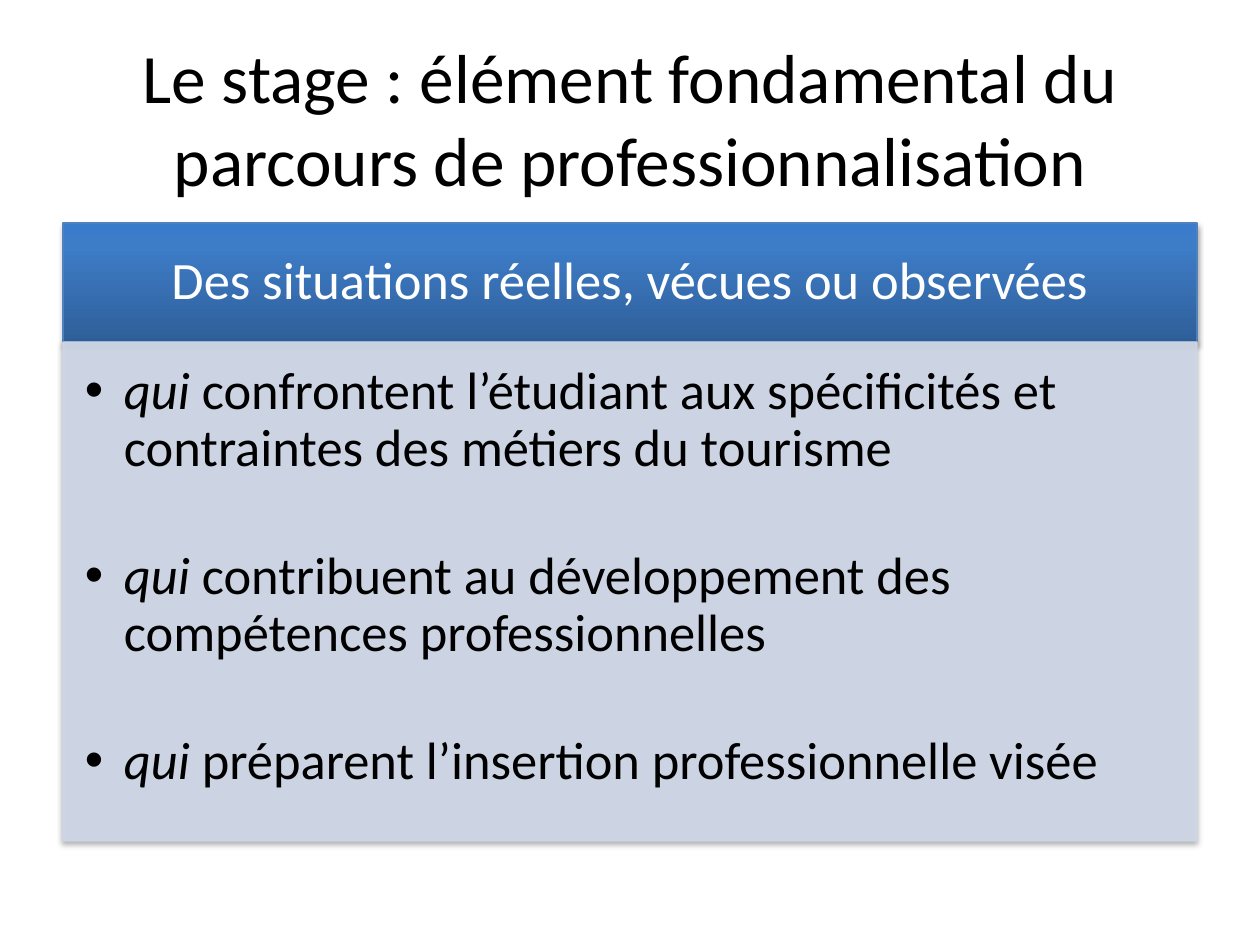
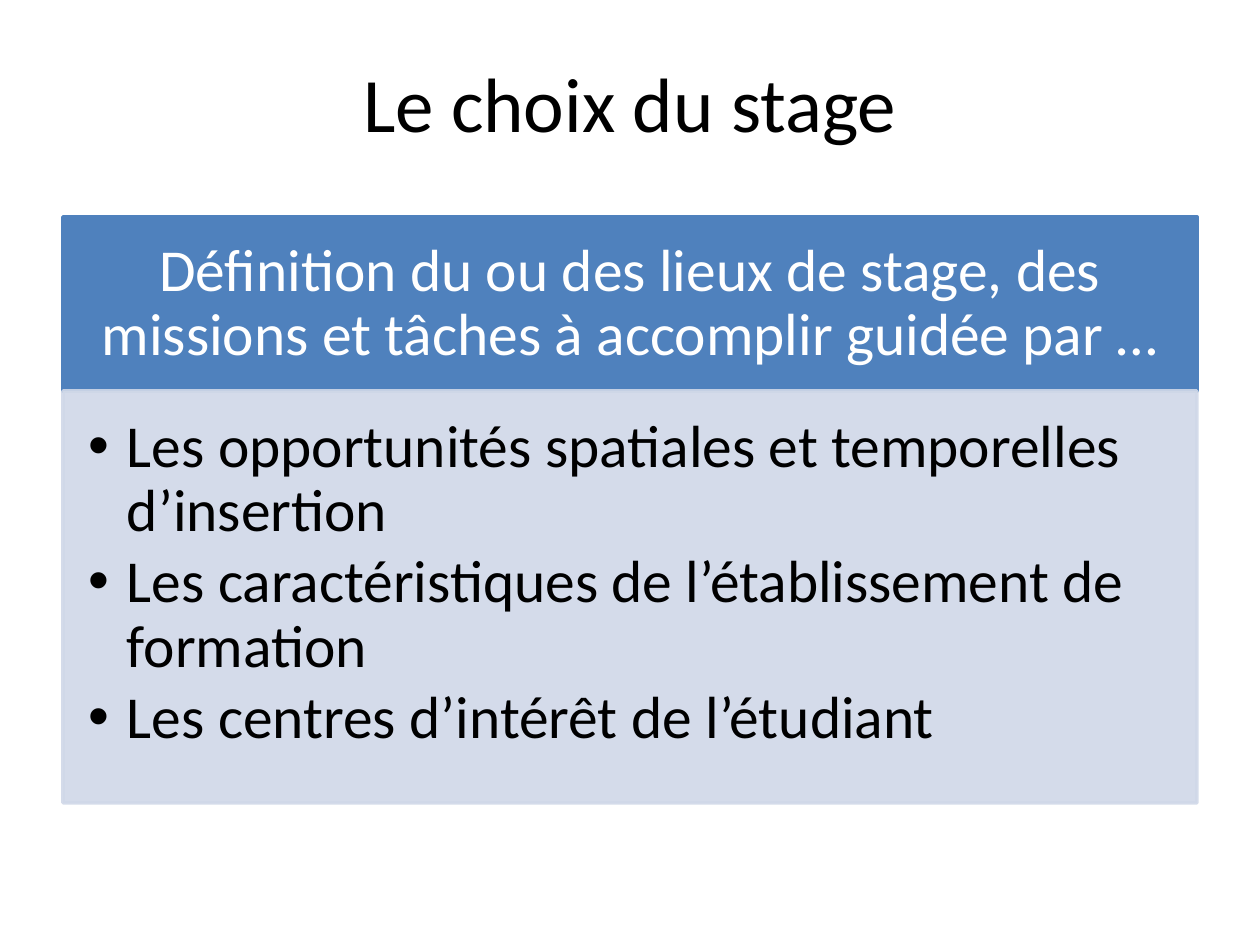
from copy import deepcopy
from dataclasses import dataclass

from lxml.etree import SubElement
from pptx import Presentation
from pptx.dml.color import RGBColor as RGB
from pptx.enum.shapes import MSO_SHAPE as SHAPE
from pptx.enum.text import MSO_ANCHOR as ANCHOR, MSO_AUTO_SIZE as FIT, PP_ALIGN as ALIGN
from pptx.oxml.ns import qn
from pptx.util import Emu, Pt

PX = 914400 / 126  # EMU in one px
LEFT, WIDTH = 63, 1134


@dataclass(frozen=True)
class Theme:
    font: str = "Calibri"
    ink: str = "000000"
    paper: str = "FFFFFF"
    accent: str = "4F81BD"
    panel: str = "D0D8E8"
    gradient: tuple = ((0, "2F5F99"), (0.8, "3D7CC7"), (1, "3A7CCB"))
    panel_opacity: int = 90
    shadow_opacity: int = 35


THEME = Theme()


def px(n):
    return Emu(round(n * PX))


def apply(target, values):
    for name, value in values.items():
        setattr(target, name, value)


def place(sp, top, height):
    apply(sp, dict(left=px(LEFT), top=px(top), width=px(WIDTH), height=px(height)))


def add_run(p, text, size, color, italic=False):
    r = p.add_run()
    r.text = text
    apply(r.font, dict(name=THEME.font, size=Pt(size), italic=italic))
    r.font.color.rgb = RGB.from_string(color)


def set_frame(tf, anchor, insets):
    sides = ("margin_left", "margin_top", "margin_right", "margin_bottom")
    apply(tf, dict(zip(sides, map(px, insets))))
    apply(tf, dict(word_wrap=True, auto_size=FIT.NONE, vertical_anchor=anchor))


def set_alpha(color_el, percent):
    SubElement(color_el, qn("a:alpha"), val=str(percent * 1000))


def paint(sp, color, line_width):
    sp.fill.solid()
    sp.fill.fore_color.rgb = sp.line.color.rgb = RGB.from_string(color)
    sp.line.width = Pt(line_width)


def paint_gradient(sp):
    sp.fill.gradient()
    sp.fill.gradient_angle = 90
    stops = sp._element.spPr.find(".//" + qn("a:gsLst"))
    stops.append(deepcopy(stops[-1]))
    for stop, (position, color) in zip(sp.fill.gradient_stops, THEME.gradient):
        stop.position = position
        stop.color.rgb = RGB.from_string(color)


def set_shadow(sp, visible):
    sp.shadow.inherit = False
    if visible:
        effects = sp._element.spPr.find(qn("a:effectLst"))
        outer = SubElement(effects, qn("a:outerShdw"), blurRad="40000", dist="23000",
                           dir="5400000", rotWithShape="0")
        set_alpha(SubElement(outer, qn("a:srgbClr"), val=THEME.ink), THEME.shadow_opacity)


def set_title(s, text, height, size):
    sp = s.shapes.title
    place(sp, 38, height)
    tf = sp.text_frame
    apply(tf, dict(word_wrap=True, auto_size=FIT.NONE, vertical_anchor=ANCHOR.MIDDLE))
    p = tf.paragraphs[0]
    p.alignment = ALIGN.CENTER
    add_run(p, text, size, THEME.ink)


def add_header(s, text, top, height, size, line_width, insets, raised):
    sp = s.shapes.add_shape(SHAPE.RECTANGLE, 0, 0, 0, 0)
    place(sp, top, height)
    paint(sp, THEME.accent, line_width)
    if raised:
        paint_gradient(sp)
    set_shadow(sp, raised)
    set_frame(sp.text_frame, ANCHOR.MIDDLE, insets)
    p = sp.text_frame.paragraphs[0]
    apply(p, dict(alignment=ALIGN.CENTER, line_spacing=0.9))
    add_run(p, text, size, THEME.paper)


def set_list(s, items, top, height, size, line_width, insets, gap, raised):
    sp = s.placeholders[1]
    s.shapes._spTree.append(sp._element)  # in front of the header
    place(sp, top, height)
    paint(sp, THEME.panel, line_width)
    for color_el in sp._element.spPr.iter(qn("a:srgbClr")):
        set_alpha(color_el, THEME.panel_opacity)
    set_shadow(sp, raised)
    tf = sp.text_frame
    set_frame(tf, ANCHOR.TOP, insets)
    for i, (lead, text) in enumerate(items):
        p = tf.add_paragraph() if i else tf.paragraphs[0]
        apply(p, dict(line_spacing=0.9, space_before=Pt(0), space_after=Pt(gap)))
        apply_indent = p._p.get_or_add_pPr().set
        apply_indent("marL", str(px(39)))
        apply_indent("indent", str(-px(39)))
        if lead:
            add_run(p, lead, size, THEME.ink, italic=True)
        add_run(p, text, size, THEME.ink)


def main():
    prs = Presentation()
    prs.slide_width, prs.slide_height = px(1260), px(945)
    title_and_content = prs.slide_layouts[1]

    # Role of the internship
    s = prs.slides.add_slide(title_and_content)
    look = dict(size=30, line_width=0.75, raised=True)
    set_title(s, "Le stage : élément fondamental du parcours de professionnalisation", 158, 39.6)
    add_header(s, "Des situations réelles, vécues ou observées", 223, 119,
               insets=(29, 16, 29, 16), **look)
    set_list(s, [
        ("qui ", "confrontent l’étudiant aux spécificités et contraintes des métiers du tourisme"),
        ("qui", " contribuent au développement des compétences professionnelles"),
        ("qui", " préparent l’insertion professionnelle visée"),
    ], 342, 499, insets=(22, 22, 29, 33), gap=41, **look)

    # Choice of the internship
    s = prs.slides.add_slide(title_and_content)
    look = dict(size=34, line_width=2, raised=False)
    set_title(s, "Le choix du stage", 127, 44)
    add_header(s, "Définition du ou des lieux de stage, des missions et tâches à accomplir guidée par …",
               217, 174, insets=(33, 19, 33, 19), **look)
    set_list(s, [
        ("", "Les opportunités spatiales et temporelles d’insertion"),
        ("", "Les caractéristiques de l’établissement de formation"),
        ("", "Les centres d’intérêt de l’étudiant"),
    ], 391, 412, insets=(25, 25, 33, 38), gap=4, **look)

    prs.save("out.pptx")


if __name__ == "__main__":
    main()
